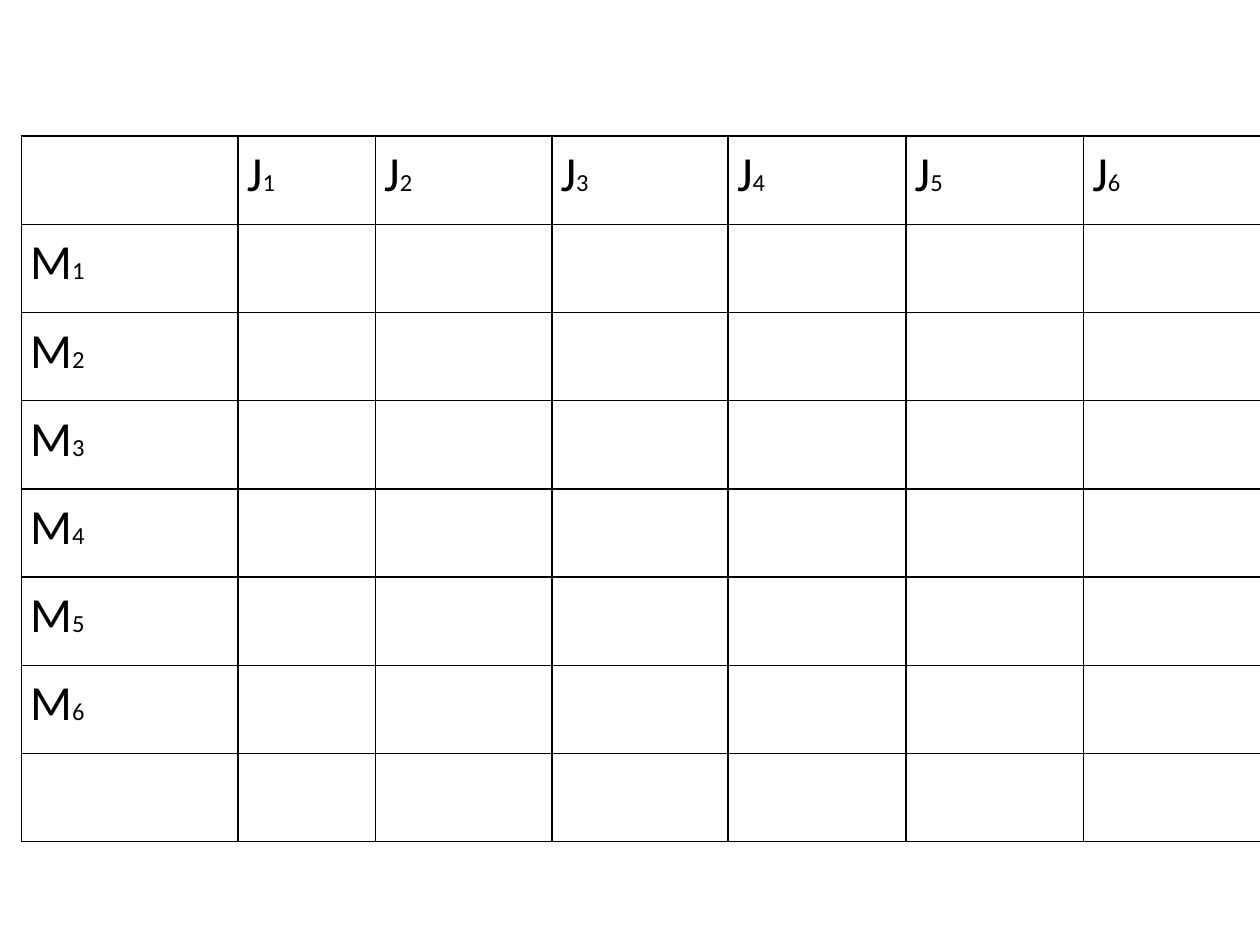
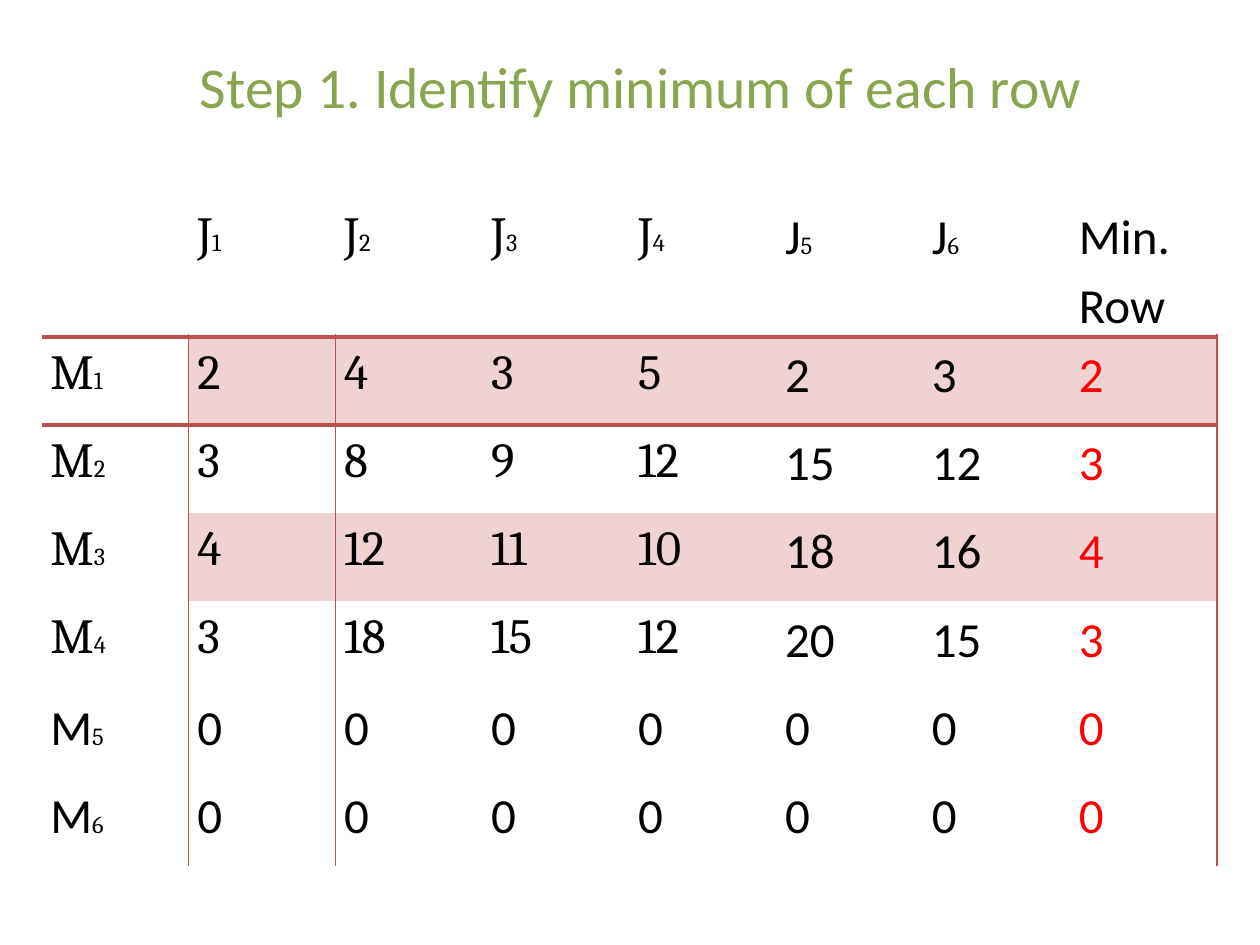
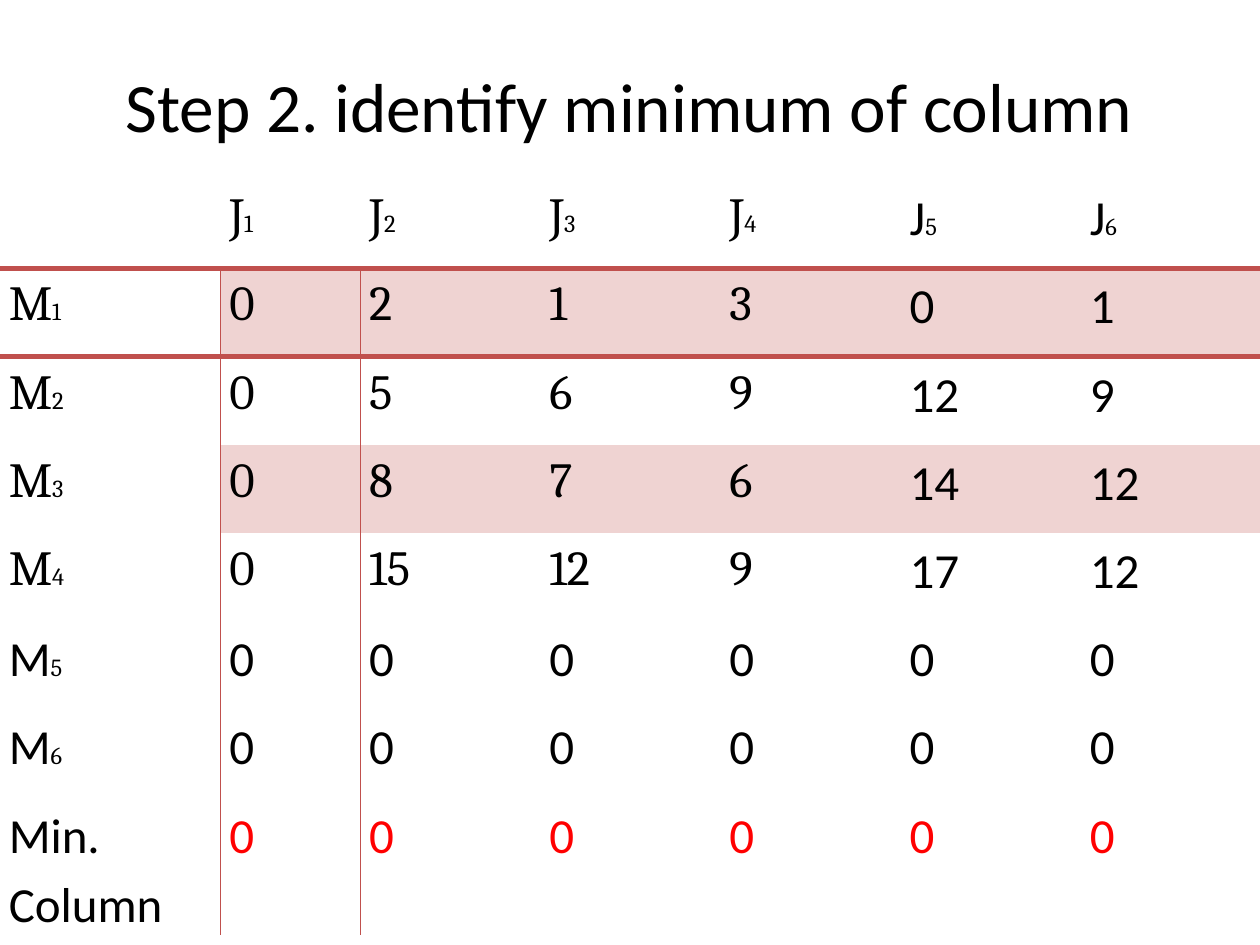
"""Build three slides of machine and job tables for an assignment problem."""
from lxml import etree
from pptx import Presentation
from pptx.dml.color import RGBColor
from pptx.enum import text as text_enum
from pptx.oxml import ns
from pptx.util import Inches, Pt

COLORS = {
    "black": "000000", "white": "FFFFFF", "green": "89A54F",
    "rule": "C0504D", "band": "EFD3D2", "minimum": "FF0000",
}
NO_STYLE = "{2D5ABB26-0587-4C30-8999-92F81FD0307C}"
SANS, SERIF = "Calibri", "Cambria"
ROW_HEIGHT = 0.7
SERIF_LIMIT = 5
BANDED_ROWS = (1, 3)
JOBS = [f"J{number}" for number in range(1, 7)]
MACHINES = [f"M{number}" for number in range(1, 7)]

ROW_COSTS = [
    [2, 4, 3, 5, 2, 3],
    [3, 8, 9, 12, 15, 12],
    [4, 12, 11, 10, 18, 16],
    [3, 18, 15, 12, 20, 15],
    [0] * 6,
    [0] * 6,
]
REDUCED_COSTS = [[cost - min(costs) for cost in costs] for costs in ROW_COSTS]
COLUMN_MINIMA = [min(column) for column in zip(*REDUCED_COSTS)]

EMPTY_GRID = [["", *JOBS]] + [[name] + [""] * 6 for name in [*MACHINES, ""]]
ROW_GRID = [["", *JOBS, "Min.\nRow"]] + [
    [name, *costs, min(costs)] for name, costs in zip(MACHINES, ROW_COSTS)]
COLUMN_GRID = [["", *JOBS]] + [
    [name, *costs] for name, costs in zip(MACHINES, REDUCED_COSTS)
] + [["Min.\nColumn", *COLUMN_MINIMA]]

SLIDES = [
    {"title": None, "grid": EMPTY_GRID, "at": (0.17, 1.08), "ruled": True,
     "widths": [1.72, 1.09, 1.4, 1.4, 1.41, 1.41, 1.41]},
    {"title": ("Step 1. Identify minimum of each row", 33, "green",
               text_enum.MSO_ANCHOR.BOTTOM, (0.42, 0.17)),
     "grid": ROW_GRID, "at": (0.33, 1.58), "ruled": False,
     "widths": [9.33 / 8] * 8, "minimum_column": 7},
    {"title": ("Step 2. identify minimum of column", 39.6, "black",
               text_enum.MSO_ANCHOR.MIDDLE, (0.33, 0.42)),
     "grid": COLUMN_GRID, "at": (0, 1.43), "ruled": False,
     "widths": [1.75, 1.11] + [1.43] * 5, "minimum_row": 7},
]


def color(name):
    return RGBColor.from_string(COLORS[name])


def add_span(para, words, size, face, ink):
    span = para.add_run()
    span.text = words
    span.font.size = Pt(size)
    span.font.name = face
    span.font.bold = False
    span.font.color.rgb = color(ink)


def add_title(page, words, size, ink, anchor, corner):
    title = page.shapes.title
    title.left, title.top = map(Inches, corner)
    title.width, title.height = Inches(9.33), Inches(0.83)
    frame = title.text_frame
    frame.word_wrap = True
    frame.auto_size = text_enum.MSO_AUTO_SIZE.NONE
    frame.vertical_anchor = anchor
    para = frame.paragraphs[0]
    para.alignment = text_enum.PP_ALIGN.CENTER
    add_span(para, words, size, SANS, ink)


def set_borders(cell, borders):
    """Add lines to a cell from a dict of side to (colour, points)."""
    properties = cell._tc.get_or_add_tcPr()
    sides = [side for side in "LRTB" if side in borders]
    for place, side in enumerate(sides):
        ink, points = borders[side]
        line = etree.Element(ns.qn(f"a:ln{side}"), w=str(Pt(points)))
        fill = etree.SubElement(line, ns.qn("a:solidFill"))
        etree.SubElement(fill, ns.qn("a:srgbClr"), val=COLORS[ink])
        properties.insert(place, line)


def find_borders(row, column, layout):
    if layout["ruled"]:
        return dict.fromkeys("LRTB", ("black", 1))
    borders = {}
    if row == 0:
        borders["B"] = ("rule", 3)
        return borders
    if row == 1:
        borders["T"] = ("rule", 3)
    if column == 1:
        borders["L"] = ("rule", 1)
    if column in (0, layout.get("minimum_column")):
        borders["R"] = ("rule", 1)
    return borders


def fill_cell(cell, value, row, column, layout):
    cell.margin_left = cell.margin_right = Inches(0.07)
    cell.margin_top = cell.margin_bottom = 0
    serif = not layout["ruled"] and max(row, column) < SERIF_LIMIT
    face = SERIF if serif else SANS
    small_face = SANS if layout["ruled"] else SERIF
    is_minimum = row > 0 and column > 0 and (
        row == layout.get("minimum_row")
        or column == layout.get("minimum_column"))
    ink = "minimum" if is_minimum else "black"
    for index, words in enumerate(str(value).split("\n")):
        frame = cell.text_frame
        para = frame.add_paragraph() if index else frame.paragraphs[0]
        para.line_spacing = 1.15
        if words in JOBS + MACHINES:
            add_span(para, words[0], 28, face, ink)
            add_span(para, words[1:], 14, small_face, ink)
        elif words:
            add_span(para, words, 28, face, ink)
    if layout["ruled"] or (row and column and row not in BANDED_ROWS):
        cell.fill.background()
    else:
        cell.fill.solid()
        cell.fill.fore_color.rgb = color("band" if row and column else "white")
    set_borders(cell, find_borders(row, column, layout))


def add_grid(page, layout):
    grid, widths = layout["grid"], layout["widths"]
    left, top = layout["at"]
    frame = page.shapes.add_table(
        len(grid), len(widths), Inches(left), Inches(top),
        Inches(sum(widths)), Inches(ROW_HEIGHT * len(grid)))
    table = frame.table
    table.first_row = table.horz_banding = False
    for style in frame.element.iter(ns.qn("a:tableStyleId")):
        style.text = NO_STYLE
    for column, width in zip(table.columns, widths):
        column.width = Inches(width)
    for row, values in enumerate(grid):
        table.rows[row].height = Inches(ROW_HEIGHT)
        for column, value in enumerate(values):
            fill_cell(table.cell(row, column), value, row, column, layout)


def main():
    deck = Presentation()
    deck.slide_width, deck.slide_height = Inches(10), Inches(7.5)
    title_only, blank = deck.slide_layouts[5], deck.slide_layouts[6]
    for layout in SLIDES:
        page = deck.slides.add_slide(title_only if layout["title"] else blank)
        if layout["title"]:
            add_title(page, *layout["title"])
        add_grid(page, layout)
    deck.save("out.pptx")


if __name__ == "__main__":
    main()
